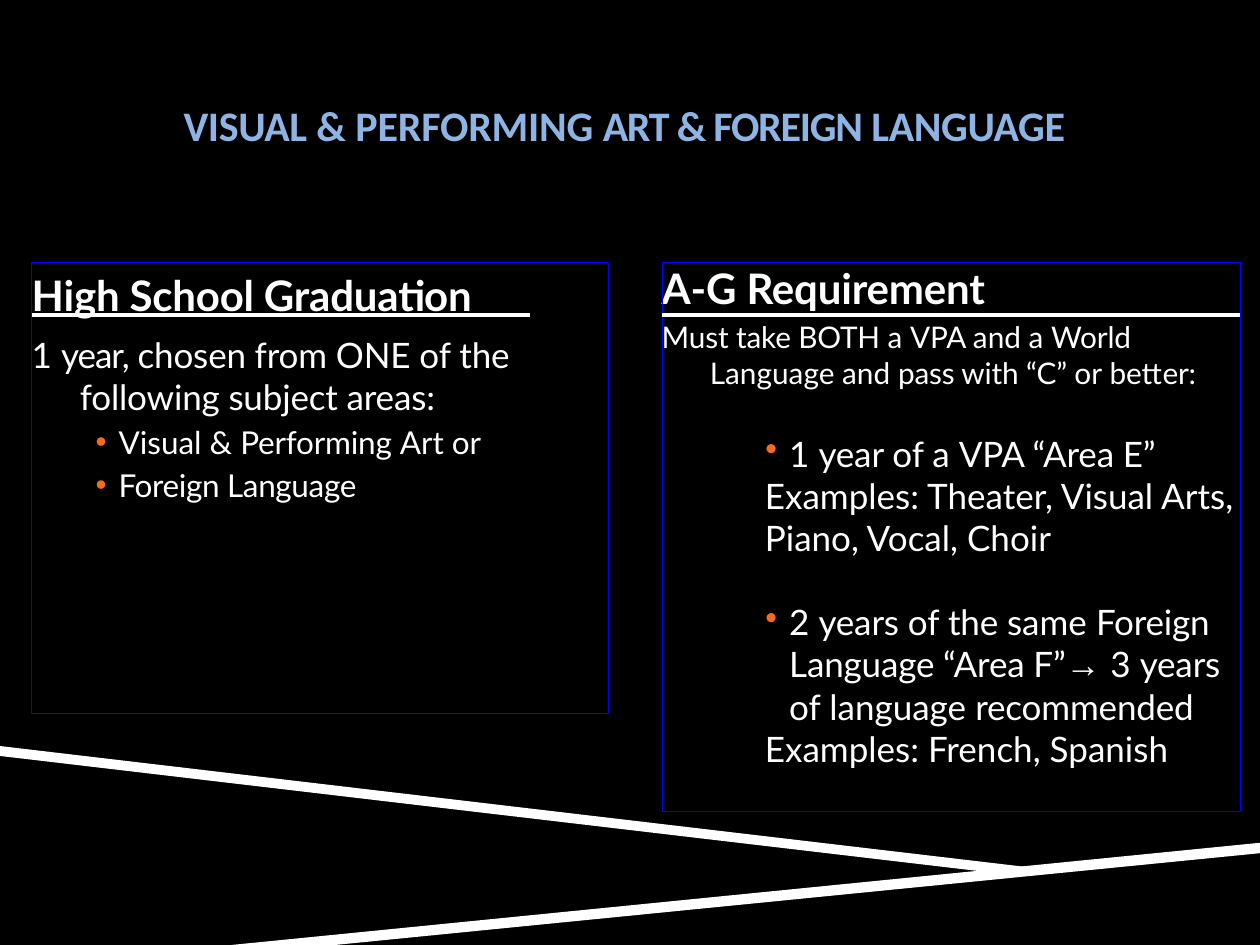
import pptx
import pptx.dml.color
import pptx.enum.shapes
import pptx.enum.text
import pptx.oxml
import pptx.util
from lxml import etree
from pptx.oxml.ns import qn
from pptx.util import Cm, Pt

BLACK, WHITE, BLUE, SKY, ORANGE = "000000", "FFFFFF", "0000FF", "8EB4E3", "F86A1B"

# Content: a paragraph is (format, runs); a run is (text, letter spacing in points)
HEADING = dict(size=24, bold=True)
TITLE = [(dict(HEADING, font="Calibri", color=SKY, align=pptx.enum.text.PP_ALIGN.CENTER), [
    ("VISUAL ", -0.2), ("& ", 0), ("PERFORMING ", -0.1),
    ("ART & FOREIGN ", -0.7), ("LANGUAGE", -0.2)])]

GRADUATION = [
    (HEADING, [("High School Graduation", -0.1)]),
    (dict(size=20, before=8), [("1 ", 0), ("year, ", -0.6), ("chosen from ONE ", -0.1),
                               ("of ", 0), ("the", -0.1)]),
    (dict(size=20, left=0.97), [("following subject areas:", -0.1)]),
    (dict(size=18, left=1.75, hang=0.46, before=3),
     [("Visual & ", 0), ("Performing ", -0.1), ("Art or", 0)]),
    (dict(size=18, left=1.75, hang=0.46, before=3), [("Foreign Language", -0.2)]),
]

REQUIREMENT_HEAD = [(dict(HEADING, line=Pt(25.9)), [("A-G Requirement", -0.1)])]
POINT = dict(size=20, left=2.57, hang=0.48, before=24)
EXAMPLE = dict(size=20, left=2.08)
REQUIREMENT = [
    (dict(size=17), [("Must take BOTH ", -0.1), ("a ", 0), ("VPA ", -0.1),
                     ("and a ", 0), ("World", -0.1)]),
    (dict(size=17, left=0.97), [("Language and ", 0), ("pass with “C” ", -0.1),
                                ("or", 0), (" better:", -0.1)]),
    (POINT, [("1 ", 0), ("year ", -0.1), ("of a ", 0), ("VPA “Area E”", -0.1)]),
    (EXAMPLE, [("Examples: Theater, Visual Arts, Piano, Vocal, Choir", 0)]),
    (POINT, [("2 ", 0), ("years ", -0.1), ("of ", 0), ("the ", -0.1), ("same ", 0),
             ("Foreign Language “Area F”", -0.1), ("→ ", 0), ("3 ", 0),
             ("years ", -0.1), ("of language ", 0), ("recommended", -0.1)]),
    (EXAMPLE, [("Examples: French, Spanish", 0)]),
]

# Places in centimetres
BANDS = [
    [(0, 15.04), (0, 15.24), (20.07, 17.6), (21.13, 17.53)],
    [(25.4, 16.99), (4.67, 19.05), (6.76, 19.05), (25.4, 17.2)],
]
TITLE_AT = (1.47, 1.98, 22.23, 2.08)
FRAME_AT = (0.64, 5.28, 11.63, 9.09)
GRADUATION_AT = (0.64, 5.05, 11.63, 5.16)
RULE = (0.64, 6.35, 10.69, 6.35)
TABLE_LEFT, TABLE_TOP = 13.34, 5.28
COLUMNS, ROWS = (7.37, 4.29), (1.07, 10.01)

# Cell borders: left, right, top, bottom as (colour, points)
THIN, THICK = (BLUE, 0.25), (WHITE, 3)
BORDERS = {
    (0, 0): (THIN, None, THIN, THICK), (0, 1): (None, THIN, THIN, THICK),
    (1, 0): (THIN, THIN, THICK, THIN), (1, 1): (THIN, THIN, THICK, THIN),
}


def rgb(value):
    return pptx.dml.color.RGBColor.from_string(value)


def paint(fill, color):
    fill.solid()
    fill.fore_color.rgb = rgb(color)


def place(shape, at):
    for name, value in zip(("left", "top", "width", "height"), at):
        setattr(shape, name, Cm(value))


def write(frame, paragraphs):
    for number, (style, runs) in enumerate(paragraphs):
        para = frame.add_paragraph() if number else frame.paragraphs[0]
        hang = style.get("hang", 0)
        props = para._p.get_or_add_pPr()
        props.set("marL", str(Cm(style.get("left", 0))))
        props.set("indent", str(-Cm(hang)))
        if hang:
            color = etree.SubElement(props, qn("a:buClr"))
            etree.SubElement(color, qn("a:srgbClr"), val=ORANGE)
            etree.SubElement(props, qn("a:buChar"), char="•")
        else:
            etree.SubElement(props, qn("a:buNone"))
        layout = dict(space_before=Pt(style.get("before", 0)), space_after=Pt(0),
                      line_spacing=style.get("line", 1.0),
                      alignment=style.get("align", pptx.enum.text.PP_ALIGN.LEFT))
        for name, value in layout.items():
            setattr(para, name, value)
        for text, spacing in runs:
            span = para.add_run()
            span.text = text
            font = "Arial" if "→" in text else style.get("font", "Lato")
            look = dict(name=font, size=Pt(style["size"]), bold=style.get("bold", False))
            for name, value in look.items():
                setattr(span.font, name, value)
            span.font.color.rgb = rgb(style.get("color", WHITE))
            span._r.get_or_add_rPr().set("spc", str(round(spacing * 100)))


def fill_placeholder(shape, at, top_margin, paragraphs):
    place(shape, at)
    frame = shape.text_frame
    layout = dict(margin_left=0, margin_right=0, margin_bottom=0, margin_top=Cm(top_margin),
                  word_wrap=True, auto_size=pptx.enum.text.MSO_AUTO_SIZE.NONE,
                  vertical_anchor=pptx.enum.text.MSO_ANCHOR.TOP)
    for name, value in layout.items():
        setattr(frame, name, value)
    write(frame, paragraphs)


def set_borders(cell, borders):
    props = cell._tc.get_or_add_tcPr()
    for number, (side, border) in enumerate(zip("LRTB", borders)):
        line = etree.Element(qn("a:ln" + side))
        if border:
            line.set("w", str(Pt(border[1])))
            solid = etree.SubElement(line, qn("a:solidFill"))
            etree.SubElement(solid, qn("a:srgbClr"), val=border[0])
        else:
            etree.SubElement(line, qn("a:noFill"))
        props.insert(number, line)


def main():
    deck = pptx.Presentation()
    deck.slide_width, deck.slide_height = Cm(25.4), Cm(19.05)
    page = deck.slides.add_slide(deck.slide_layouts[1])
    paint(page.background.fill, BLACK)
    shapes = page.shapes
    title, body = shapes.title, page.placeholders[1]

    # Crossing white bands
    for corners in BANDS:
        points = [(Cm(x), Cm(y)) for x, y in corners]
        builder = shapes.build_freeform(*points[0])
        builder.add_line_segments(points[1:], close=True)
        band = builder.convert_to_shape()
        band.shadow.inherit = False
        paint(band.fill, WHITE)
        band.line.fill.background()

    # Left frame and the rule under its heading
    frame = shapes.add_shape(pptx.enum.shapes.MSO_SHAPE.RECTANGLE, *map(Cm, FRAME_AT))
    frame.shadow.inherit = False
    frame.fill.background()
    rule = shapes.add_connector(pptx.enum.shapes.MSO_CONNECTOR.STRAIGHT, *map(Cm, RULE))
    etree.SubElement(rule._element.spPr, qn("a:effectLst"))
    for line, color, width in ((frame.line, BLUE, 0.25), (rule.line, WHITE, 2.4)):
        line.color.rgb = rgb(color)
        line.width = Pt(width)

    # Title and left list, in front of the frame
    for holder in (title, body):
        shapes._spTree.append(holder._element)
    fill_placeholder(title, TITLE_AT, 0.03, TITLE)
    fill_placeholder(body, GRADUATION_AT, 0.38, GRADUATION)

    # Requirement table
    table = shapes.add_table(len(ROWS), len(COLUMNS), Cm(TABLE_LEFT), Cm(TABLE_TOP),
                             Cm(sum(COLUMNS)), Cm(sum(ROWS))).table
    table.first_row = table.horz_banding = False
    for column, width in zip(table.columns, COLUMNS):
        column.width = Cm(width)
    for row, height in zip(table.rows, ROWS):
        row.height = Cm(height)
    table.cell(1, 0).merge(table.cell(1, 1))
    for (row, column), borders in BORDERS.items():
        cell = table.cell(row, column)
        cell.fill.background()
        cell.margin_left = cell.margin_right = cell.margin_bottom = 0
        cell.margin_top = Cm(0.08 if row else 0.13)
        set_borders(cell, borders)
    write(table.cell(0, 0).text_frame, REQUIREMENT_HEAD)
    write(table.cell(1, 0).text_frame, REQUIREMENT)

    deck.save("out.pptx")


if __name__ == "__main__":
    main()
